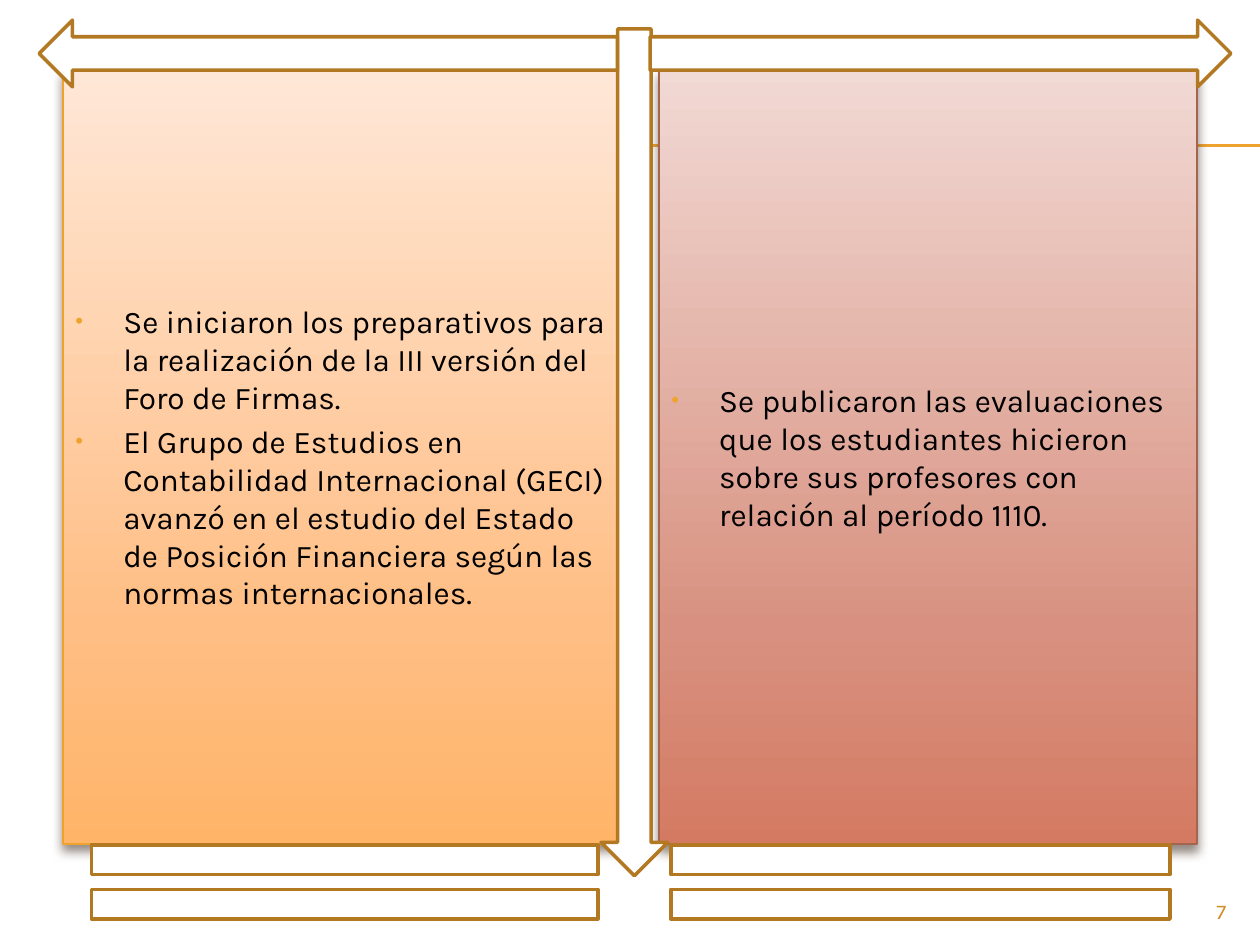
"""Build a two-panel slide framed by arrows and equal signs."""
import lxml.etree
import pptx
import pptx.dml.color
import pptx.enum.shapes
import pptx.enum.text
import pptx.oxml
import pptx.oxml.ns
import pptx.util

Inches = pptx.util.Inches
Pt = pptx.util.Pt
SHAPE = pptx.enum.shapes.MSO_SHAPE
NAMESPACE = pptx.oxml.ns.nsdecls("a")


def color(value):
    return pptx.dml.color.RGBColor.from_string(value)


def add_xml(parent, *fragments):
    for fragment in fragments:
        tag, rest = fragment.split(" ", 1)
        parent.append(pptx.oxml.parse_xml(f"<a:{tag} {NAMESPACE} {rest}"))


deck = pptx.Presentation()
deck.slide_width, deck.slide_height = Inches(10), Inches(7.5)
page = deck.slides.add_slide(deck.slide_layouts[6])

for height in (1.15, 1.16):
    rule = page.shapes.add_connector(
        pptx.enum.shapes.MSO_CONNECTOR.STRAIGHT,
        Inches(0.56), Inches(height), Inches(10), Inches(height))
    rule.line.color.rgb = color("F0A22E")
    rule.line.width = Pt(0.75)
    add_xml(rule._element.spPr, "effectLst />")

panels = [
    (0.5, 4.42, "F0A22E", ("FFE7D7", "FFBE84", "FFB468"), [
        "Se iniciaron los preparativos para la realización de la III versión del "
        "Foro de Firmas.",
        "El Grupo de Estudios en Contabilidad Internacional (GECI) avanzó en el "
        "estudio del Estado de Posición Financiera según las normas internacionales.",
    ]),
    (5.23, 4.27, "A5644E", ("F1D9D4", "D89180", "D47A62"), [
        "Se publicaron las evaluaciones que los estudiantes hicieron sobre sus "
        "profesores con relación al período 1110.",
    ]),
]
body_font = {"name": "Karla", "size": Pt(18), "color": "000000"}
number_font = {"name": "Karla", "size": Pt(12), "color": "D48F29"}

for left, width, outline, shades, texts in panels:
    panel = page.shapes.add_shape(
        SHAPE.RECTANGLE, Inches(left), Inches(0.55), Inches(width), Inches(6.15))
    panel.line.color.rgb = color(outline)
    panel.line.width = Pt(0.79)
    panel.fill.gradient()
    panel.fill.gradient_angle = 270
    stops = panel._element.spPr.find(".//" + pptx.oxml.ns.qn("a:gsLst"))
    for stop in list(stops):
        stops.remove(stop)
    for position, shade in zip((0, 72, 100), shades):
        add_xml(stops, f'gs pos="{position * 1000}"><a:srgbClr val="{shade}"/></a:gs>')
    panel.shadow.inherit = False
    add_xml(
        panel._element.spPr.find(pptx.oxml.ns.qn("a:effectLst")),
        f'outerShdw blurRad="{Pt(6)}" dist="{Pt(4)}" dir="5400000" rotWithShape="0">'
        '<a:srgbClr val="4E3B30"><a:alpha val="60000"/></a:srgbClr></a:outerShdw>')
    frame = panel.text_frame
    frame.word_wrap = True
    frame.vertical_anchor = pptx.enum.text.MSO_ANCHOR.MIDDLE
    for index, text in enumerate(texts):
        para = frame.add_paragraph() if index else frame.paragraphs[0]
        properties = para._p.get_or_add_pPr()
        properties.set("marL", str(Inches(0.38)))
        properties.set("indent", str(Inches(-0.38)))
        add_xml(
            properties,
            'buClr ><a:srgbClr val="F0A22E"/></a:buClr>',
            'buSzPct val="70000"/>',
            'buFont typeface="Arial"/>',
            'buChar char="•"/>')
        para.alignment = pptx.enum.text.PP_ALIGN.LEFT
        para.space_before = Pt(3.6 if index else 0)
        span = para.add_run()
        span.text = text
        for key, value in body_font.items():
            if key == "color":
                span.font.color.rgb = color(value)
            else:
                setattr(span.font, key, value)

ornaments = [
    (SHAPE.DOWN_ARROW, 4.77, 0.23, 0.53, 6.72),
    (SHAPE.RIGHT_ARROW, 5.16, 0.16, 4.61, 0.53),
    (SHAPE.LEFT_ARROW, 0.31, 0.16, 4.59, 0.53),
    (SHAPE.MATH_EQUAL, 0, 6.5, 5.47, 1),
    (SHAPE.MATH_EQUAL, 4.61, 6.5, 5.39, 1),
]
for kind, *place in ornaments:
    ornament = page.shapes.add_shape(kind, *map(Inches, place))
    ornament.shadow.inherit = False
    ornament.fill.solid()
    ornament.fill.fore_color.rgb = color("FFFFFF")
    ornament.line.color.rgb = color("B27822")
    ornament.line.width = Pt(2)

box = page.shapes.add_textbox(Inches(9), Inches(7.08), Inches(0.83), Inches(0.27))
box.text_frame.word_wrap = True
para = box.text_frame.paragraphs[0]
para.alignment = pptx.enum.text.PP_ALIGN.RIGHT
span = para.add_run()
span.text = "7"
for key, value in number_font.items():
    if key == "color":
        span.font.color.rgb = color(value)
    else:
        setattr(span.font, key, value)

deck.save("out.pptx")
